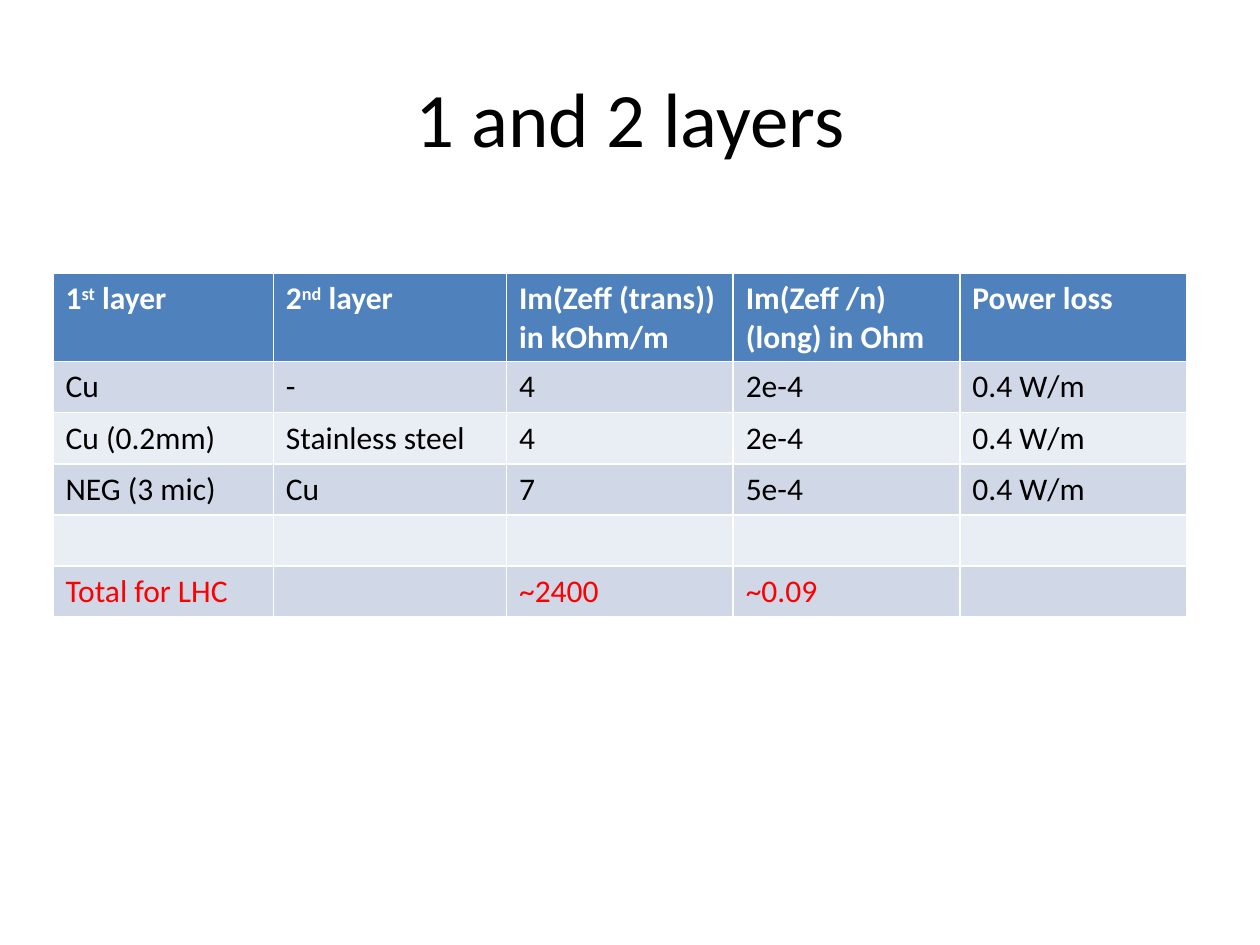
"""Build a slide with a table of impedance and power loss for one and two layers."""
from pptx import Presentation
from pptx.dml.color import RGBColor
from pptx.enum.text import MSO_ANCHOR, PP_ALIGN
from pptx.util import Cm, Pt

TITLE = "1 and 2 layers"
HEAD = ["1^st^ layer", "2^nd^ layer", "Im(Zeff (trans))\nin kOhm/m",
        "Im(Zeff /n) (long) in Ohm", "Power loss"]
BODY = [
    ["Cu", "-", "4", "2e-4", "0.4 W/m"],
    ["Cu (0.2mm)", "Stainless steel", "4", "2e-4", "0.4 W/m"],
    ["NEG (3 mic)", "Cu", "7", "5e-4", "0.4 W/m"],
    ["", "", "", "", ""],
    ["Total for LHC", "", "~2400", "~0.09", ""],
]
WIDTHS = [4.44, 4.7, 4.57, 4.57, 4.57]
TALL, LOW = 1.78, 1.03
BLUE, BANDS = "4F81BD", ["D0D8E8", "E9EDF4"]
WHITE, BLACK, RED = "FFFFFF", "000000", "FF0000"


def tint(hue):
    return RGBColor.from_string(hue)


def write(frame, text, size=18, color=BLACK, bold=False, align=PP_ALIGN.LEFT):
    """Write text in which carets enclose a superscript."""
    par = frame.paragraphs[0]
    par.alignment = align
    par.font.size = Pt(size)
    for part, chunk in enumerate(text.split("^")):
        for row, line in enumerate(chunk.split("\n")):
            if row:
                par.add_line_break()
            run = par.add_run()
            run.text = line
            font = run.font
            font.name, font.size, font.bold = "Calibri", Pt(size), bold
            font.color.rgb = tint(color)
            if part % 2:
                run._r.get_or_add_rPr().set("baseline", "30000")


def main():
    deck = Presentation()
    deck.slide_width, deck.slide_height = Cm(25.4), Cm(19.05)
    slide = deck.slides.add_slide(deck.slide_layouts[6])

    frame = slide.shapes.add_textbox(Cm(1.27), Cm(0.76), Cm(22.86), Cm(3.18)).text_frame
    frame.word_wrap = True
    frame.vertical_anchor = MSO_ANCHOR.MIDDLE
    write(frame, TITLE, size=44, align=PP_ALIGN.CENTER)

    rows = [HEAD] + BODY
    highs = [TALL] + [LOW] * len(BODY)
    table = slide.shapes.add_table(len(rows), len(HEAD), Cm(1.07), Cm(5.51),
                                   Cm(sum(WIDTHS)), Cm(sum(highs))).table
    for col, width in zip(table.columns, WIDTHS):
        col.width = Cm(width)
    for y, (row, high) in enumerate(zip(rows, highs)):
        table.rows[y].height = Cm(high)
        top, last = y == 0, y == len(BODY)
        fill = BLUE if top else BANDS[(y - 1) % 2]
        color = WHITE if top else RED if last else BLACK
        for x, text in enumerate(row):
            cell = table.cell(y, x)
            cell.fill.solid()
            cell.fill.fore_color.rgb = tint(fill)
            if text:
                write(cell.text_frame, text, color=color, bold=top)
    deck.save("out.pptx")


if __name__ == "__main__":
    main()
